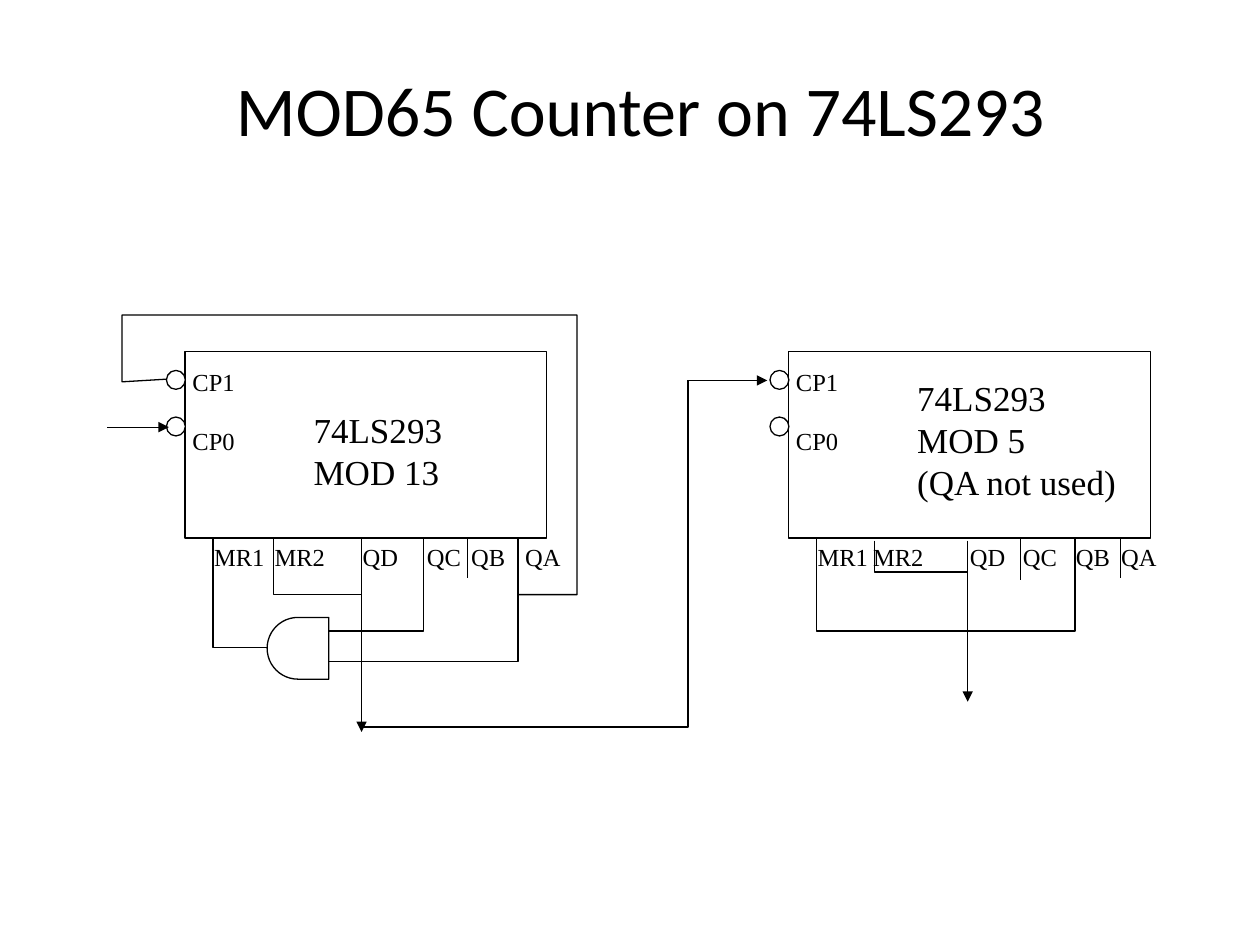
"""Draw the MOD65 counter made of two 74LS293 chips."""
import pptx
import pptx.chart.data
import pptx.dml.color
import pptx.enum.shapes
import pptx.enum.text
import pptx.oxml
import pptx.oxml.ns
import pptx.util

Pt = pptx.util.Pt
Kind = pptx.enum.shapes.MSO_SHAPE
INK, PAPER = "000000", "FFFFFF"
FRAME = {"margin_left": Pt(7.2), "margin_right": 0, "margin_top": Pt(3.6),
         "margin_bottom": Pt(3.6), "word_wrap": True}


def style(item, fill=None):
    item.line.color.rgb = pptx.dml.color.RGBColor.from_string(INK)
    item.line.width = Pt(0.75)
    if fill:
        item.shadow.inherit = False
        item.fill.solid()
        item.fill.fore_color.rgb = pptx.dml.color.RGBColor.from_string(fill)


def write(box, lines, size, face="Times New Roman", gap=0, align=None):
    frame = slide.shapes.add_textbox(*map(Pt, box)).text_frame
    for name, value in FRAME.items():
        setattr(frame, name, value)
    frame.text = "\n".join(lines)
    for para in frame.paragraphs:
        para.alignment = align
        for name, value in {"size": Pt(size), "name": face}.items():
            setattr(para.runs[0].font, name, value)
        para.runs[0].font.color.rgb = pptx.dml.color.RGBColor.from_string(INK)
    frame.paragraphs[-1].space_before = Pt(gap)


deck = pptx.Presentation()
deck.slide_width, deck.slide_height = Pt(720), Pt(540)
slide = deck.slides.add_slide(deck.slide_layouts[6])

write((100, 34.6, 533.5, 55.4), ["MOD65 Counter on 74LS293 "], 40, "Calibri",
      align=pptx.enum.text.PP_ALIGN.CENTER)

pins = {"MR1": 46.8, "MR2": 46.8, "QD": 36, "QC": 34.6, "QB": 37.4, "QA": 33.8}
chips = [
    (105.8, (172.1, 229.7, 108.7, 52.6), ["74LS293", "MOD 13"],
     [115.2, 149.8, 200.2, 236.9, 262.1, 293]),
    (450.7, (517, 211.7, 123.1, 77.8), ["74LS293", "MOD 5", "(QA not used)"],
     [460.1, 491.8, 547.2, 577.4, 607.7, 633.6]),
]
for left, box, lines, spots in chips:
    parts = [(Kind.RECTANGLE, left, 200.9, 206.6, 106.6)]
    parts += [(Kind.OVAL, left - 10.7, top, 10.8, 10.8) for top in (211.7, 238.3)]
    for kind, *place in parts:
        style(slide.shapes.add_shape(kind, *map(Pt, place)), PAPER)
    write((left - 2.9, 205.9, 53.3, 56.2), ["CP1", "CP0"], 14, gap=17)
    write(box, lines, 20)
    for (pin, width), spot in zip(pins.items(), spots):
        write((spot, 306.2, width, 28.8), [pin], 14)

gate = slide.shapes.add_shape(Kind.FLOWCHART_DELAY, *map(Pt, (152.6, 352.8, 35.3, 35.3)))
gate.rotation = 180
style(gate, PAPER)

wires = [
    [(156.2, 307.4), (156.2, 339.8), (206.6, 339.8), (206.6, 307.4)],
    [(241.9, 307.4), (241.9, 360.7), (187.9, 360.7)],
    [(121.7, 307.4), (121.7, 370.1), (152.6, 370.1)],
    [(296, 339.8), (329.8, 339.8), (329.8, 180), (69.8, 180), (69.8, 218.2), (95, 216.7)],
    [(296, 307.4), (296, 378), (187.9, 378)],
    [(393.1, 217.4), (393.1, 415.4), (206.6, 415.4)],
    [(614.2, 307.4), (614.2, 360.7), (466.6, 360.7), (466.6, 307.4)],
    [(499.7, 308.9), (499.7, 326.9), (553, 326.9)],
]
for first, *rest in wires:
    pen = slide.shapes.build_freeform(*map(Pt, first), scale=1.0)
    pen.add_line_segments([(Pt(x), Pt(y)) for x, y in rest], close=False)
    wire = pen.convert_to_shape()
    wire.shadow.inherit = False
    wire.fill.background()
    style(wire)

leads = [
    (393.1, 217.4, 438.5, 217.4, True),
    (553, 308.9, 553, 401, True),
    (61.2, 244.1, 96.5, 244.1, True),
    (206.6, 307.4, 206.6, 418.3, True),
    (267.1, 307.4, 267.1, 330.5, False),
    (583.2, 308.2, 583.2, 331.2, False),
    (640.1, 307.4, 640.1, 330.5, False),
]
for *ends, arrow in leads:
    lead = slide.shapes.add_connector(
        pptx.enum.shapes.MSO_CONNECTOR.STRAIGHT, *map(Pt, ends))
    style(lead)
    if arrow:
        tip = pptx.oxml.parse_xml(
            f'<a:tailEnd {pptx.oxml.ns.nsdecls("a")} type="triangle"/>')
        lead.line._get_or_add_ln().append(tip)
    lead._element.spPr.append(
        pptx.oxml.parse_xml(f'<a:effectLst {pptx.oxml.ns.nsdecls("a")}/>'))

deck.save("out.pptx")
